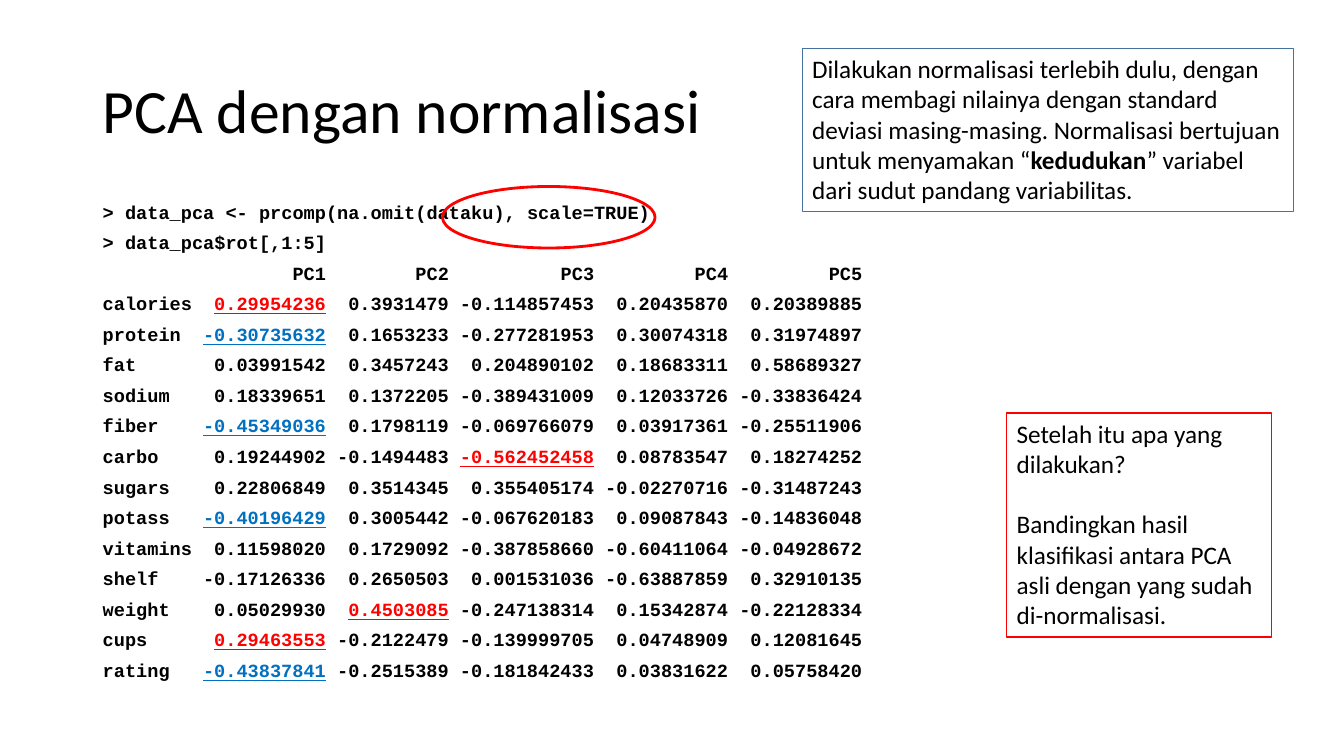
from lxml import etree
from pptx import Presentation
from pptx.dml.color import RGBColor
from pptx.enum.shapes import MSO_SHAPE
from pptx.enum.text import MSO_ANCHOR, PP_ALIGN
from pptx.oxml.ns import qn
from pptx.util import Cm, Pt

RECT, OVAL = MSO_SHAPE.RECTANGLE, MSO_SHAPE.OVAL
TOP, MIDDLE = MSO_ANCHOR.TOP, MSO_ANCHOR.MIDDLE
LEFT = PP_ALIGN.LEFT

COLORS = {"text": "000000", "red": "FF0000", "blue": "0070C0", "edge": "43739E"}
SANS, MONO = "Calibri", "Courier New"

CODE_SIZE = 13.3
CHAR = CODE_SIZE * 0.6 * 2.54 / 72  # width of one code letter in cm
ENDS = (20, 31, 44, 56, 68)  # letter count at the right edge of each column

COMMANDS = ("> data_pca <- prcomp(na.omit(dataku), scale=TRUE)",
            "> data_pca$rot[,1:5]")
HEADS = ("PC1", "PC2", "PC3", "PC4", "PC5")
LOADS = {
    "calories": "0.29954236 0.3931479 -0.114857453 0.20435870 0.20389885",
    "protein": "-0.30735632 0.1653233 -0.277281953 0.30074318 0.31974897",
    "fat": "0.03991542 0.3457243 0.204890102 0.18683311 0.58689327",
    "sodium": "0.18339651 0.1372205 -0.389431009 0.12033726 -0.33836424",
    "fiber": "-0.45349036 0.1798119 -0.069766079 0.03917361 -0.25511906",
    "carbo": "0.19244902 -0.1494483 -0.562452458 0.08783547 0.18274252",
    "sugars": "0.22806849 0.3514345 0.355405174 -0.02270716 -0.31487243",
    "potass": "-0.40196429 0.3005442 -0.067620183 0.09087843 -0.14836048",
    "vitamins": "0.11598020 0.1729092 -0.387858660 -0.60411064 -0.04928672",
    "shelf": "-0.17126336 0.2650503 0.001531036 -0.63887859 0.32910135",
    "weight": "0.05029930 0.4503085 -0.247138314 0.15342874 -0.22128334",
    "cups": "0.29463553 -0.2122479 -0.139999705 0.04748909 0.12081645",
    "rating": "-0.43837841 -0.2515389 -0.181842433 0.03831622 0.05758420",
}
MARKS = {
    ("calories", "PC1"): "red", ("protein", "PC1"): "blue",
    ("fiber", "PC1"): "blue", ("carbo", "PC3"): "red",
    ("potass", "PC1"): "blue", ("weight", "PC2"): "red",
    ("cups", "PC1"): "red", ("rating", "PC1"): "blue",
}


def rgb(name):
    return RGBColor.from_string(COLORS[name])


def put(para, text, color="text", **form):
    """Add a run and give it its format."""
    run = para.add_run()
    run.text = text
    run.font.color.rgb = rgb(color)
    for key, value in form.items():
        setattr(run.font, key, value)


def set_frame(shape, anchor=TOP):
    frame = shape.text_frame
    frame.word_wrap = True
    frame.vertical_anchor = anchor
    return frame


def set_tabs(para):
    """Right-align each number column at its last letter."""
    tabs = etree.SubElement(para._p.get_or_add_pPr(), qn("a:tabLst"))
    for end in ENDS:
        etree.SubElement(tabs, qn("a:tab"), pos=str(Cm(end * CHAR)), algn="r")


def add_outline(slide, kind, box, color, width):
    shape = slide.shapes.add_shape(kind, *map(Cm, box))
    shape.shadow.inherit = False
    shape.fill.background()
    shape.line.color.rgb = rgb(color)
    shape.line.width = Pt(width)
    return shape


def add_title(slide, box, text):
    frame = set_frame(slide.shapes.add_textbox(*map(Cm, box)), MIDDLE)
    para = frame.paragraphs[0]
    para.line_spacing = 0.9
    put(para, text, size=Pt(44), name=SANS)


def add_code(slide, box):
    frame = set_frame(slide.shapes.add_textbox(*map(Cm, box)))
    form = {"size": Pt(CODE_SIZE), "name": MONO, "bold": True}
    rows = [(line, ()) for line in COMMANDS] + [("", HEADS)]
    rows += [(name, nums.split()) for name, nums in LOADS.items()]
    for i, (label, cells) in enumerate(rows):
        para = frame.add_paragraph() if i else frame.paragraphs[0]
        para.line_spacing = 0.7
        para.space_before = Pt(10.65)
        if cells:
            set_tabs(para)
        if label:
            put(para, label, **form)
        for head, cell in zip(HEADS, cells):
            mark = MARKS.get((label, head))
            put(para, "\t", **form)
            put(para, cell, mark or "text", underline=bool(mark), **form)


def add_note(slide, box, color, width, paras, gap=0):
    """Outlined note; each paragraph is a list of (text, bold) parts."""
    frame = set_frame(add_outline(slide, RECT, box, color, width))
    for i, parts in enumerate(paras):
        para = frame.add_paragraph() if i else frame.paragraphs[0]
        para.alignment = LEFT
        para.space_before = Pt(gap if i else 0)
        for text, bold in parts:
            put(para, text, size=Pt(18), name=SANS, bold=bold)


def main():
    deck = Presentation()
    deck.slide_width, deck.slide_height = Cm(33.87), Cm(19.05)
    slide = deck.slides.add_slide(deck.slide_layouts[6])

    # Title and console output
    add_title(slide, (2.34, 1.02, 29.21, 3.68), "PCA dengan normalisasi")
    add_code(slide, (2.34, 5.08, 29.21, 12.09))

    # Why to normalise
    add_note(slide, (20.22, 1.22, 12.37, 4.11), "edge", 0.75, [[
        ("Dilakukan normalisasi terlebih dulu, dengan cara membagi nilainya "
         "dengan standard deviasi masing-masing. Normalisasi bertujuan untuk "
         "menyamakan “", False),
        ("kedudukan", True),
        ("” variabel dari sudut pandang variabilitas.", False)]])

    # Ring around the scale option
    add_outline(slide, OVAL, (11.15, 4.7, 5.36, 1.55), "red", 2)

    # Next step
    add_note(slide, (25.37, 10.41, 6.68, 5.64), "red", 1, [
        [("Setelah itu apa yang dilakukan?", False)],
        [("Bandingkan hasil klasifikasi antara PCA asli dengan yang sudah "
          "di-normalisasi.", False)]], gap=21.6)

    deck.save("out.pptx")


if __name__ == "__main__":
    main()
